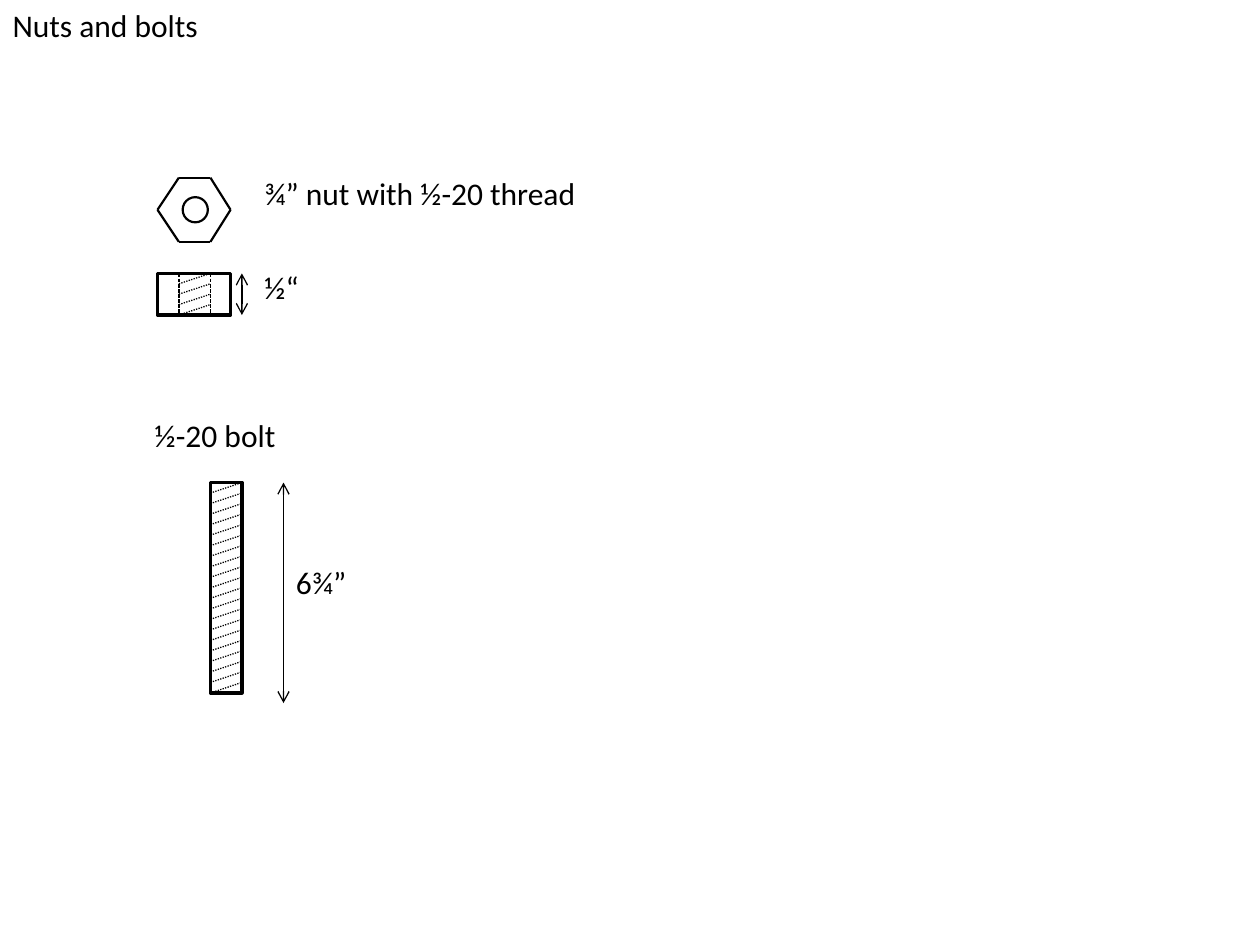
from lxml import etree
from pptx import Presentation
from pptx import util as u
from pptx.dml.color import RGBColor
from pptx.enum import dml, shapes, text
from pptx.oxml.ns import qn

BLACK = "000000"
DASH = dml.MSO_LINE.SQUARE_DOT
DOT = dml.MSO_LINE.ROUND_DOT


def color(hex_code):
    return RGBColor.from_string(hex_code)


def place(shape, left, top, width, height):
    shape.left, shape.top = u.Inches(left), u.Inches(top)
    shape.width, shape.height = u.Inches(width), u.Inches(height)


def write(shape, words, size=18, font="Calibri", fill=BLACK, wrap=True):
    frame = shape.text_frame
    frame.word_wrap = wrap
    frame.auto_size = text.MSO_AUTO_SIZE.SHAPE_TO_FIT_TEXT
    frame.vertical_anchor = text.MSO_ANCHOR.TOP
    para = frame.paragraphs[0]
    para.alignment = text.PP_ALIGN.LEFT
    span = para.add_run()
    span.text = words
    span.font.size = u.Pt(size)
    span.font.name = font
    span.font.color.rgb = color(fill)


def add_label(page, words, left, top, width, **style):
    box = page.shapes.add_textbox(0, 0, 0, 0)
    write(box, words, **style)
    place(box, left, top, width, 0.4)


def add_outline(page, kind, left, top, width, height, weight):
    shape = page.shapes.add_shape(kind, 0, 0, 0, 0)
    place(shape, left, top, width, height)
    shape.shadow.inherit = False
    shape.fill.background()
    shape.line.color.rgb = color(BLACK)
    shape.line.width = u.Pt(weight)


def add_line(page, start, end, weight=0.75, dash=None, arrows=False):
    ends = [u.Inches(value) for value in (*start, *end)]
    line = page.shapes.add_connector(shapes.MSO_CONNECTOR.STRAIGHT, *ends)
    line.line.color.rgb = color(BLACK)
    line.line.width = u.Pt(weight)
    if dash:
        line.line.dash_style = dash
    if arrows:
        stroke = line.line._get_or_add_ln()
        for tag in ("a:headEnd", "a:tailEnd"):
            etree.SubElement(stroke, qn(tag)).set("type", "arrow")
    etree.SubElement(line._element.spPr, qn("a:effectLst"))


def draw_thread(page, left, top, width, height, turns, edges):
    right, pitch = left + width, height / turns
    for first, last in edges:
        for x in (left, right):
            add_line(page, (x, top + first * pitch), (x, top + last * pitch), dash=DASH)
    for turn in range(turns):
        y = top + turn * pitch
        add_line(page, (left, y + pitch), (right, y), dash=DOT)


def draw_nut_top(page, left, top, width, height):
    right, bottom, middle = left + width, top + height, top + height / 2
    inner_left, inner_right = left + 0.17, left + 0.42
    corners = [(inner_left, top), (inner_right, top), (right, middle),
               (inner_right, bottom), (inner_left, bottom), (left, middle)]
    for start, end in zip(corners, corners[1:] + corners[:1]):
        add_line(page, start, end, weight=1.25)
    add_outline(page, shapes.MSO_SHAPE.OVAL, left + 0.2, middle - 0.1, 0.2, 0.2, 1.25)
    add_label(page, "¾” nut with ½-20 thread", left + 0.75, top - 0.08, 2.7, wrap=False)


def draw_nut_side(page, left, top, width, height):
    add_outline(page, shapes.MSO_SHAPE.RECTANGLE, left, top, width, height, 2)
    draw_thread(page, left + 0.17, top, 0.25, height, turns=4, edges=[(0, 4)])
    arrow_x = left + 0.67
    add_line(page, (arrow_x, top), (arrow_x, top + height), arrows=True)
    add_label(page, "½“", left + 0.75, top - 0.09, 0.48, wrap=False)


def draw_bolt(page, left, top, width, height):
    add_label(page, "½-20 bolt", left - 0.54, top - 0.58, 1.17, wrap=False)
    add_outline(page, shapes.MSO_SHAPE.RECTANGLE, left, top, width, height, 2)
    draw_thread(page, left, top, width, height, turns=20,
                edges=[(0, 6), (8, 14), (14, 20)])
    arrow_x = left + 0.58
    add_line(page, (arrow_x, top), (arrow_x, top + 1.75), arrows=True)
    add_label(page, "6¾”", arrow_x, top + 0.59, 0.75)


def main():
    deck = Presentation()
    deck.slide_width, deck.slide_height = u.Inches(10), u.Inches(7.5)
    page = deck.slides.add_slide(deck.slide_layouts[5])
    title = page.shapes.title
    write(title, "Nuts and bolts")
    place(title, 0, 0, 2.83, 0.4)
    draw_bolt(page, 1.67, 3.83, 0.25, 1.67)
    draw_nut_top(page, 1.25, 1.41, 0.58, 0.51)
    draw_nut_side(page, 1.25, 2.17, 0.58, 0.33)
    deck.save("out.pptx")


if __name__ == "__main__":
    main()
